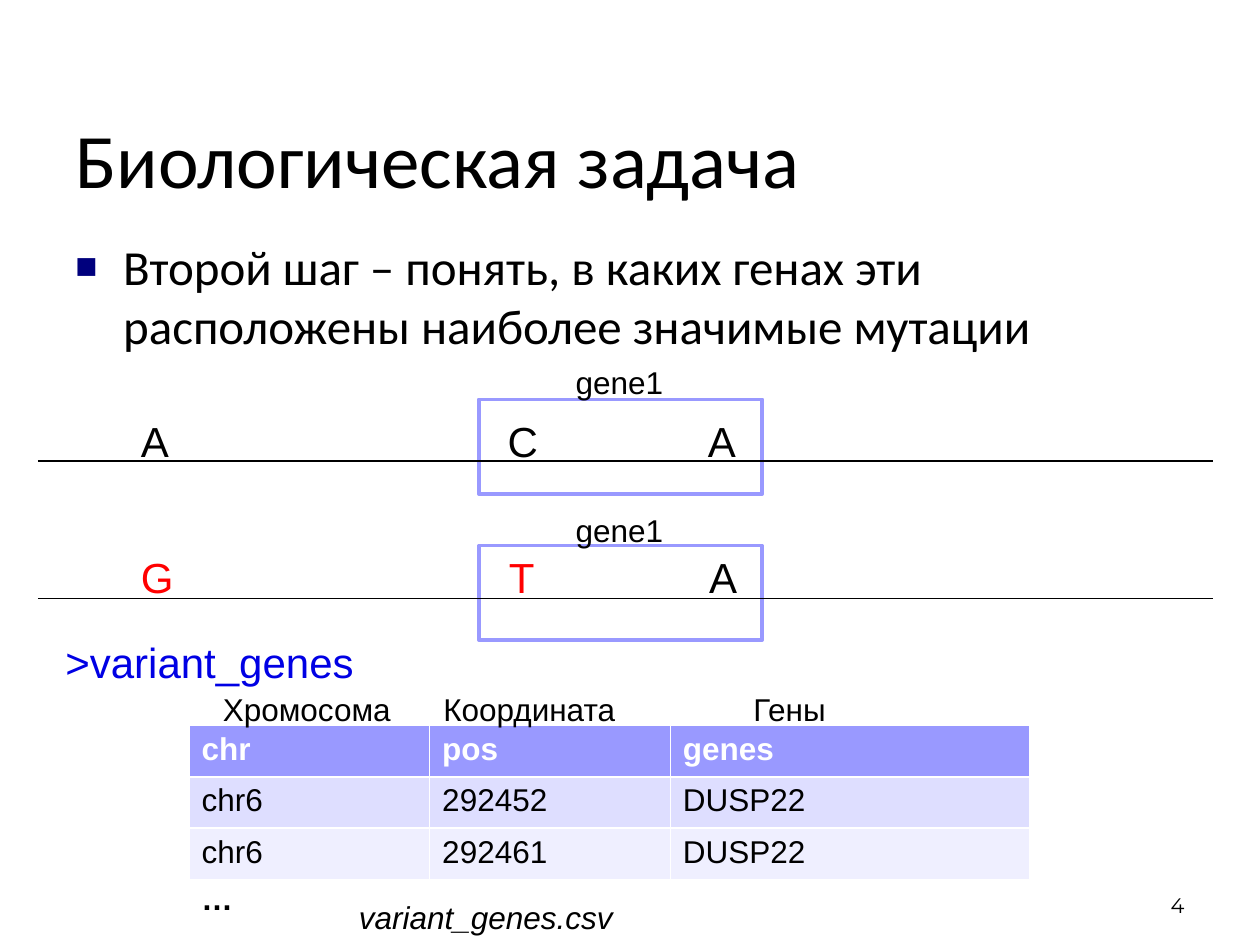
from lxml.etree import SubElement
from pptx import Presentation
from pptx.dml.color import RGBColor as RGB
from pptx.enum.shapes import MSO_CONNECTOR as Link, MSO_SHAPE as Shape
from pptx.enum.text import MSO_ANCHOR as Anchor, MSO_AUTO_SIZE as Fit, PP_ALIGN as Align
from pptx.oxml.ns import qn
from pptx.util import Emu, Pt

SCALE = 9144  # 100 px to the inch
BLACK = RGB(0x00, 0x00, 0x00)
WHITE = RGB(0xFF, 0xFF, 0xFF)
RED = RGB(0xFF, 0x00, 0x00)
BLUE = RGB(0x00, 0x00, 0xE4)
NAVY = RGB(0x00, 0x00, 0x7D)
LILAC = RGB(0x99, 0x99, 0xFF)
PALE = RGB(0xDE, 0xDE, 0xFF)
FAINT = RGB(0xEF, 0xEF, 0xFF)


def px(*nums):
    return [Emu(num * SCALE) for num in nums]


def add_run(para, text, size, color=BLACK, face="Arial", bold=False, slant=False):
    run = para.add_run()
    run.text = text
    font = run.font
    font.name, font.size = face, Pt(size)
    font.bold, font.italic = bold, slant
    font.color.rgb = color


def add_text(slide, box, text, size, wrap=False, anchor=Anchor.TOP, **style):
    """Add a text box holding one run and return its paragraph."""
    frame = slide.shapes.add_textbox(*px(*box)).text_frame
    frame.word_wrap = wrap
    frame.auto_size = Fit.NONE if wrap else Fit.SHAPE_TO_FIT_TEXT
    frame.vertical_anchor = anchor
    para = frame.paragraphs[0]
    add_run(para, text, size, **style)
    return para


def add_title(slide, box):
    add_text(slide, box, "Биологическая задача", 44, wrap=True,
             anchor=Anchor.MIDDLE, face="Calibri")


def add_body(slide, box):
    text = "Второй шаг – понять, в каких генах эти расположены наиболее значимые мутации"
    para = add_text(slide, box, text, 28, wrap=True, face="Calibri")
    props = para._p.get_or_add_pPr()
    indent = px(38)[0]
    props.set("marL", str(indent))
    props.set("indent", str(-indent))
    tint = SubElement(props, qn("a:buClr"))
    SubElement(tint, qn("a:srgbClr"), val=str(NAVY))
    SubElement(props, qn("a:buSzPct"), val="75000")
    SubElement(props, qn("a:buFont"), typeface="Arial")
    SubElement(props, qn("a:buChar"), char="■")


def add_strand(slide, box, axis, label, row, letters):
    """Draw a strand; axis, label and row are offsets from the top of the gene box."""
    left, top, width, height = box
    gene = slide.shapes.add_shape(Shape.RECTANGLE, *px(left + 350, top, 225, height))
    gene.shadow.inherit = False
    gene.fill.solid()
    gene.fill.fore_color.rgb = WHITE
    gene.line.color.rgb = LILAC
    gene.line.width = Pt(2)

    line = slide.shapes.add_connector(
        Link.STRAIGHT, *px(left, top + axis, left + width, top + axis))
    line.line.color.rgb = BLACK
    line.line.width = Pt(0.75)
    SubElement(line._element.spPr, qn("a:effectLst"))

    for shift, wide, letter, color in letters:
        add_text(slide, (left + shift, top + row, wide, 50), letter, 24, color=color)
    add_text(slide, (left + 417, top + label, 90, 40), "gene1", 18)


def add_result(slide, box):
    """Add the command, the table with its captions, and the file name."""
    left, top, width, height = box
    add_text(slide, (left - 108, top - 76, 252, 50), ">variant_genes", 24, color=BLUE)

    rows = [("chr", "pos", "genes"),
            ("chr6", "292452", "DUSP22"),
            ("chr6", "292461", "DUSP22")]
    grid = slide.shapes.add_table(3, 3, *px(*box)).table
    for col, wide in zip(grid.columns, px(191, 191, width - 382)):
        col.width = wide
    for num, (row, fill) in enumerate(zip(rows, (LILAC, PALE, FAINT))):
        head = num == 0
        for cell, text in zip(grid.rows[num].cells, row):
            cell.fill.solid()
            cell.fill.fore_color.rgb = fill
            add_run(cell.text_frame.paragraphs[0], text, 18,
                    color=WHITE if head else BLACK, bold=head)

    for shift, wide, text in ((17, 155, "Хромосома"),
                              (192, 158, "Координата"),
                              (438, 78, "Гены")):
        add_text(slide, (left + shift, top - 33, wide, 40), text, 18)
    add_text(slide, (left, top + height - 5, 45, 40), "…", 18, bold=True)
    add_text(slide, (left + 125, top + height + 10, 224, 40),
             "variant_genes.csv", 18, slant=True)


def add_number(slide, box):
    para = add_text(slide, box, "4", 12, wrap=True, anchor=Anchor.BOTTOM,
                    face="Montserrat")
    para.alignment = Align.RIGHT


def main():
    deck = Presentation()
    deck.slide_width, deck.slide_height = px(1000, 750)
    slide = deck.slides.add_slide(deck.slide_layouts[6])
    add_title(slide, (50, 50, 900, 150))
    add_body(slide, (50, 183, 900, 425))
    add_strand(slide, (30, 317, 933, 75), 49, -34, 8,
               ((72, 43, "A", BLACK), (363, 45, "C", BLACK), (522, 43, "A", BLACK)))
    add_strand(slide, (30, 433, 933, 75), 42, -32, 0,
               ((72, 46, "G", RED), (364, 41, "T", RED), (523, 43, "A", BLACK)))
    add_result(slide, (150, 576, 667, 122))
    add_number(slide, (717, 683, 233, 50))
    deck.save("out.pptx")


if __name__ == "__main__":
    main()
